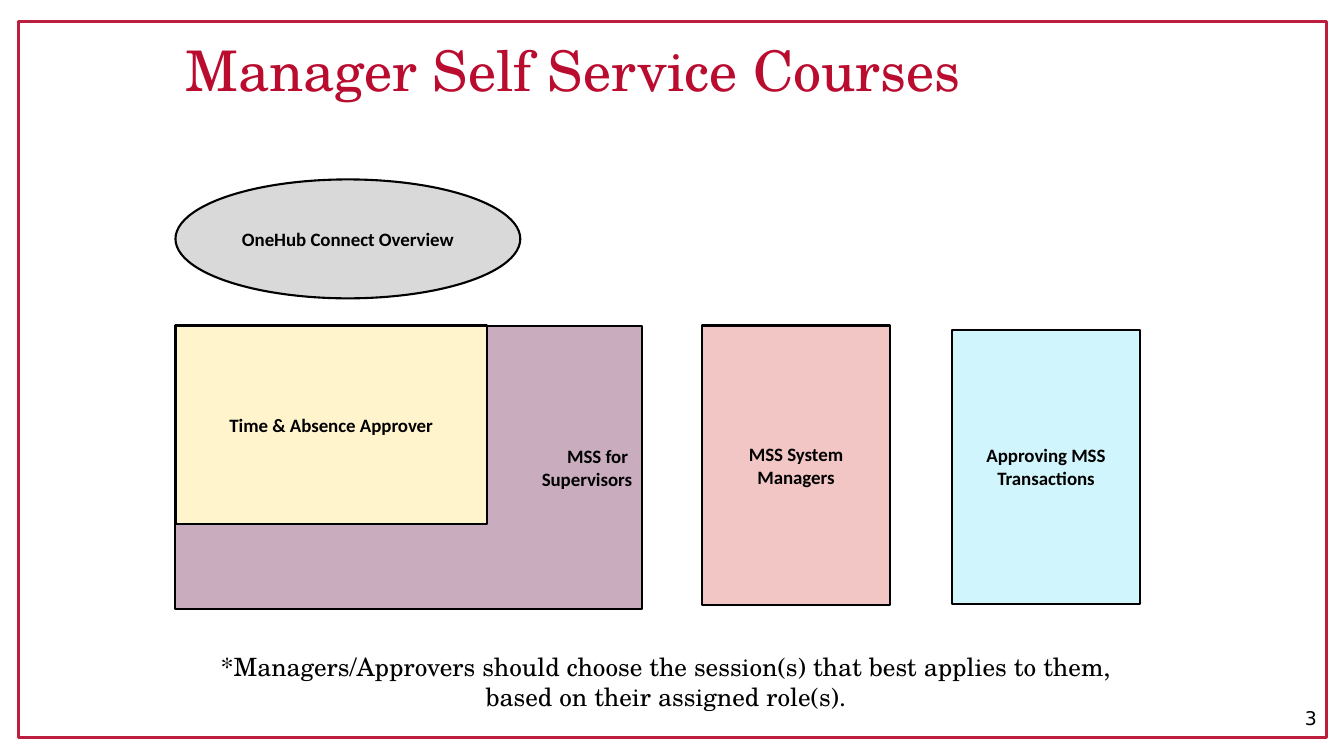
from dataclasses import dataclass

from pptx import Presentation
from pptx.dml.color import RGBColor
from pptx.enum.shapes import MSO_SHAPE
from pptx.enum.text import MSO_ANCHOR, PP_ALIGN
from pptx.slide import Slide
from pptx.text.text import TextFrame
from pptx.util import Inches, Pt

BLACK = RGBColor(0x00, 0x00, 0x00)
CRIMSON = RGBColor(0xBA, 0x0C, 0x2F)
BORDER_RED = RGBColor(0xBC, 0x1E, 0x3E)
GRAY = RGBColor(0xD9, 0xD9, 0xD9)
MAUVE = RGBColor(0xC9, 0xAD, 0xBF)
CREAM = RGBColor(0xFF, 0xF4, 0xCC)
ROSE = RGBColor(0xF1, 0xC6, 0xC5)
AQUA = RGBColor(0xD0, 0xF5, 0xFC)

TITLE_FORMAT = {"name": "TeX Gyre Schola", "size": Pt(40)}
NOTE_FORMAT = {"name": "TeX Gyre Schola", "size": Pt(18)}
NUMBER_FORMAT = {"name": "DejaVu Sans", "size": Pt(13.5)}
COURSE_FORMAT = {"name": "Calibri", "size": Pt(13.5), "bold": True}

COURSE_LEFT = 1.74
COURSE_TOP = 3.23
COURSE_WIDTH = 1.87


@dataclass(frozen=True)
class Box:
    left: float
    top: float
    width: float
    height: float

    def lengths(self) -> list[Inches]:
        return [Inches(v) for v in (self.left, self.top, self.width, self.height)]


@dataclass(frozen=True)
class Course:
    lines: tuple[str, ...]
    box: Box
    fill: RGBColor
    outline: MSO_SHAPE = MSO_SHAPE.RECTANGLE
    align: PP_ALIGN = PP_ALIGN.CENTER


@dataclass(frozen=True)
class Caption:
    text: str
    box: Box
    font_format: dict
    align: PP_ALIGN
    anchor: MSO_ANCHOR
    color: RGBColor = BLACK
    line_spacing: float = 1.0


COURSES = (
    Course(("OneHub Connect Overview",), Box(COURSE_LEFT, 1.78, 3.42, 1.18),
           GRAY, outline=MSO_SHAPE.OVAL),
    Course(("MSS for ", "Supervisors"), Box(COURSE_LEFT, COURSE_TOP, 4.63, 2.81),
           MAUVE, align=PP_ALIGN.RIGHT),
    Course(("Time & Absence Approver",), Box(COURSE_LEFT, COURSE_TOP, 3.09, 1.97), CREAM),
    Course(("MSS System Managers",), Box(6.96, COURSE_TOP, COURSE_WIDTH, 2.77), ROSE),
    Course(("Approving MSS Transactions",), Box(9.44, 3.27, COURSE_WIDTH, 2.72), AQUA),
)

CAPTIONS = (
    Caption("Manager Self Service Courses", Box(1.74, 0.26, 11.42, 0.93),
            TITLE_FORMAT, PP_ALIGN.LEFT, MSO_ANCHOR.MIDDLE, CRIMSON, 0.9),
    Caption("3", Box(10.16, 6.92, 3, 0.4), NUMBER_FORMAT, PP_ALIGN.RIGHT, MSO_ANCHOR.MIDDLE),
    Caption("*Managers/Approvers should choose the session(s) that best applies to them, "
            "based on their assigned role(s).", Box(1.9, 6.41, 9.41, 0.93),
            NOTE_FORMAT, PP_ALIGN.CENTER, MSO_ANCHOR.TOP),
)


def write_text(frame: TextFrame, lines: tuple[str, ...], font_format: dict,
               align: PP_ALIGN, anchor: MSO_ANCHOR, color: RGBColor,
               line_spacing: float = 1.0) -> None:
    frame.word_wrap = True
    frame.vertical_anchor = anchor
    for index, line in enumerate(lines):
        paragraph = frame.add_paragraph() if index else frame.paragraphs[0]
        paragraph.alignment = align
        paragraph.line_spacing = line_spacing
        run = paragraph.add_run()
        run.text = line
        for attribute, value in font_format.items():
            setattr(run.font, attribute, value)
        run.font.color.rgb = color


def draw_border(slide: Slide) -> None:
    border = slide.shapes.add_shape(
        MSO_SHAPE.RECTANGLE, *Box(0.18, 0.21, 12.98, 7.11).lengths())
    border.shadow.inherit = False
    border.fill.background()
    border.line.color.rgb = BORDER_RED
    border.line.width = Pt(2)


def draw_caption(slide: Slide, caption: Caption) -> None:
    textbox = slide.shapes.add_textbox(*caption.box.lengths())
    write_text(textbox.text_frame, (caption.text,), caption.font_format, caption.align,
               caption.anchor, caption.color, caption.line_spacing)


def draw_course(slide: Slide, course: Course) -> None:
    panel = slide.shapes.add_shape(course.outline, *course.box.lengths())
    panel.shadow.inherit = False
    panel.fill.solid()
    panel.fill.fore_color.rgb = course.fill
    panel.line.color.rgb = BLACK
    panel.line.width = Pt(1.5)
    write_text(panel.text_frame, course.lines, COURSE_FORMAT, course.align,
               MSO_ANCHOR.MIDDLE, BLACK)


def main() -> None:
    presentation = Presentation()
    presentation.slide_width = Inches(13.33)
    presentation.slide_height = Inches(7.5)
    slide = presentation.slides.add_slide(presentation.slide_layouts[6])
    draw_border(slide)
    for caption in CAPTIONS:
        draw_caption(slide, caption)
    for course in COURSES:
        draw_course(slide, course)
    presentation.save("out.pptx")


if __name__ == "__main__":
    main()
